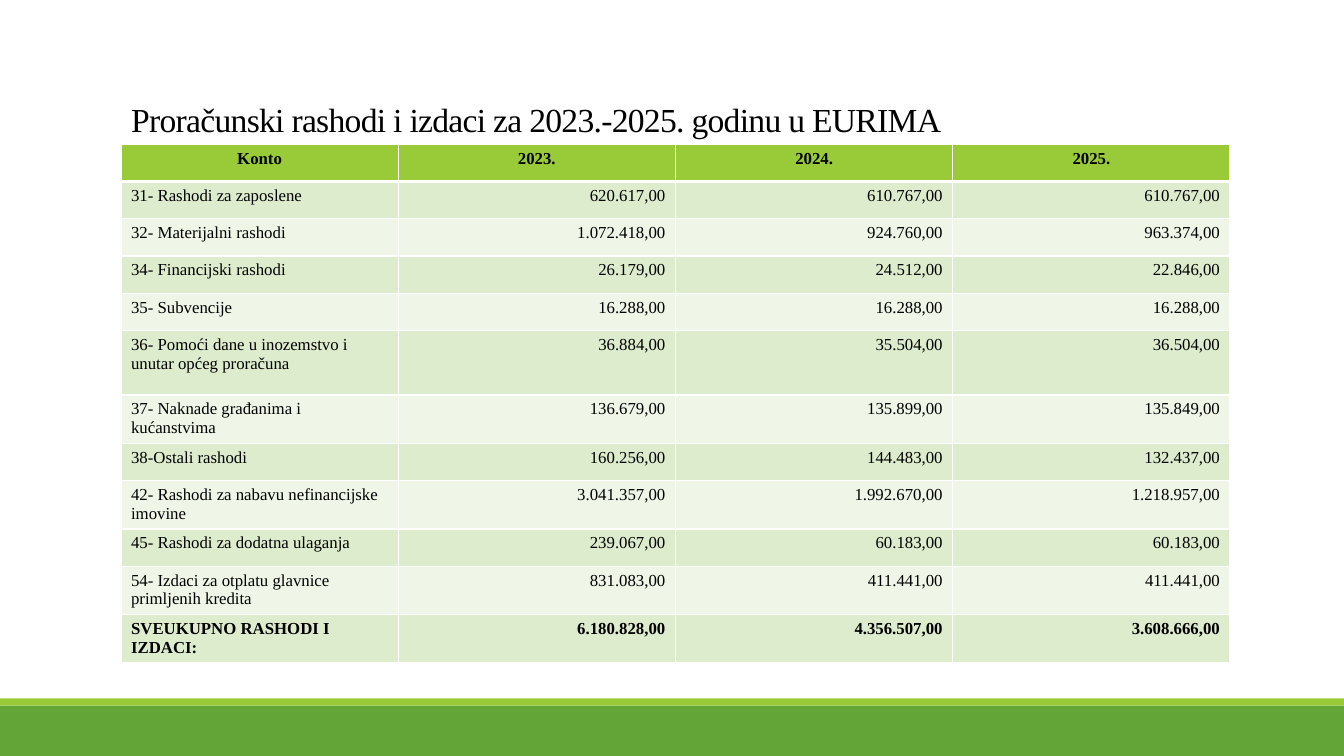
from dataclasses import dataclass

from lxml import etree
from pptx import Presentation
from pptx.dml.color import RGBColor
from pptx.enum.shapes import MSO_SHAPE
from pptx.enum.text import MSO_ANCHOR, MSO_AUTO_SIZE, PP_ALIGN
from pptx.oxml.ns import qn
from pptx.util import Inches, Pt

LEFT, CENTER, RIGHT = PP_ALIGN.LEFT, PP_ALIGN.CENTER, PP_ALIGN.RIGHT
BOTTOM = MSO_ANCHOR.BOTTOM
NO_AUTOFIT = MSO_AUTO_SIZE.NONE
RECTANGLE = MSO_SHAPE.RECTANGLE

TITLE = "Proračunski rashodi i izdaci za 2023.-2025. godinu u EURIMA"
HEADER = ("Konto", "2023.", "2024.", "2025.")
EXPENSES = [
    ("31- Rashodi za zaposlene", "620.617,00", "610.767,00", "610.767,00"),
    ("32- Materijalni rashodi", "1.072.418,00", "924.760,00", "963.374,00"),
    ("34- Financijski rashodi", "26.179,00", "24.512,00", "22.846,00"),
    ("35- Subvencije", "16.288,00", "16.288,00", "16.288,00"),
    ("36- Pomoći dane u inozemstvo i unutar općeg proračuna", "36.884,00", "35.504,00", "36.504,00"),
    ("37- Naknade građanima i kućanstvima", "136.679,00", "135.899,00", "135.849,00"),
    ("38-Ostali rashodi", "160.256,00", "144.483,00", "132.437,00"),
    ("42- Rashodi za nabavu nefinancijske imovine", "3.041.357,00", "1.992.670,00", "1.218.957,00"),
    ("45- Rashodi za dodatna ulaganja", "239.067,00", "60.183,00", "60.183,00"),
    ("54- Izdaci za otplatu glavnice primljenih kredita", "831.083,00", "411.441,00", "411.441,00"),
]
TOTAL = ("SVEUKUPNO RASHODI I IZDACI:", "6.180.828,00", "4.356.507,00", "3.608.666,00")
ROW_HEIGHTS = (0.37, 0.37, 0.37, 0.37, 0.37, 0.64, 0.48, 0.37, 0.48, 0.37, 0.48, 0.48)
FOOTER_BANDS = [(7, 0.5, "63A537"), (6.93, 0.07, "99CB38")]
PAGE_WIDTH, PAGE_HEIGHT = 13.33, 7.5
CONTENT_LEFT, CONTENT_WIDTH = 1.2, 11
TITLE_TOP, TITLE_HEIGHT = 0.31, 1.12


@dataclass(frozen=True)
class Theme:
    font: str = "Times New Roman"
    ink: str = "000000"
    header: str = "99CB38"
    bands: tuple = ("DEECCE", "EFF6E8")
    border: str = "FFFFFF"
    title_size: int = 24
    cell_size: int = 12


THEME = Theme()


def write(frame, text, *, size, align=LEFT, bold=False, line_spacing=None, tracking=None):
    para = frame.paragraphs[0]
    para.alignment = align
    para.line_spacing = line_spacing
    span = para.add_run()
    span.text = text
    span.font.name = THEME.font
    span.font.size = Pt(size)
    span.font.bold = bold
    span.font.color.rgb = RGBColor.from_string(THEME.ink)
    if tracking is not None:
        span.font._element.set("spc", str(round(tracking * 100)))


def paint(item, color):
    item.fill.solid()
    item.fill.fore_color.rgb = RGBColor.from_string(color)


def outline_cell(cell, *, top=1, bottom=1):
    properties = cell._tc.get_or_add_tcPr()
    for side, width in (("L", 1), ("R", 1), ("T", top), ("B", bottom)):
        line = etree.SubElement(properties, qn(f"a:ln{side}"), w=str(Pt(width)))
        solid = etree.SubElement(line, qn("a:solidFill"))
        etree.SubElement(solid, qn("a:srgbClr"), val=THEME.border)


def add_footer(page):
    for top, height, color in FOOTER_BANDS:
        band = page.shapes.add_shape(RECTANGLE, 0, Inches(top), Inches(PAGE_WIDTH), Inches(height))
        band.shadow.inherit = False
        band.line.fill.background()
        paint(band, color)


def add_title(page):
    title = page.shapes.title
    title.left, title.top = Inches(CONTENT_LEFT), Inches(TITLE_TOP)
    title.width, title.height = Inches(CONTENT_WIDTH), Inches(TITLE_HEIGHT)
    frame = title.text_frame
    frame.word_wrap = True
    frame.auto_size = NO_AUTOFIT
    frame.vertical_anchor = BOTTOM
    write(frame, TITLE, size=THEME.title_size, line_spacing=0.85, tracking=-0.5)


def add_budget(page):
    rows = [HEADER, *EXPENSES, TOTAL]
    table = page.shapes.add_table(
        len(rows), len(HEADER), Inches(CONTENT_LEFT), Inches(TITLE_TOP + TITLE_HEIGHT),
        Inches(CONTENT_WIDTH), Inches(sum(ROW_HEIGHTS))).table
    for column in table.columns:
        column.width = Inches(CONTENT_WIDTH / len(HEADER))
    for number, values in enumerate(rows):
        table.rows[number].height = Inches(ROW_HEIGHTS[number])
        is_header = number == 0
        for index, text in enumerate(values):
            cell = table.cell(number, index)
            align = CENTER if is_header else RIGHT if index else LEFT
            write(cell.text_frame, text, size=THEME.cell_size, align=align,
                  bold=is_header or values is TOTAL)
            outline_cell(cell, top=3 if number == 1 else 1, bottom=3 if is_header else 1)
            paint(cell, THEME.header if is_header else THEME.bands[(number - 1) % 2])


def main():
    deck = Presentation()
    deck.slide_width, deck.slide_height = Inches(PAGE_WIDTH), Inches(PAGE_HEIGHT)
    page = deck.slides.add_slide(deck.slide_layouts[5])
    add_footer(page)
    add_title(page)
    add_budget(page)
    deck.save("out.pptx")


if __name__ == "__main__":
    main()
